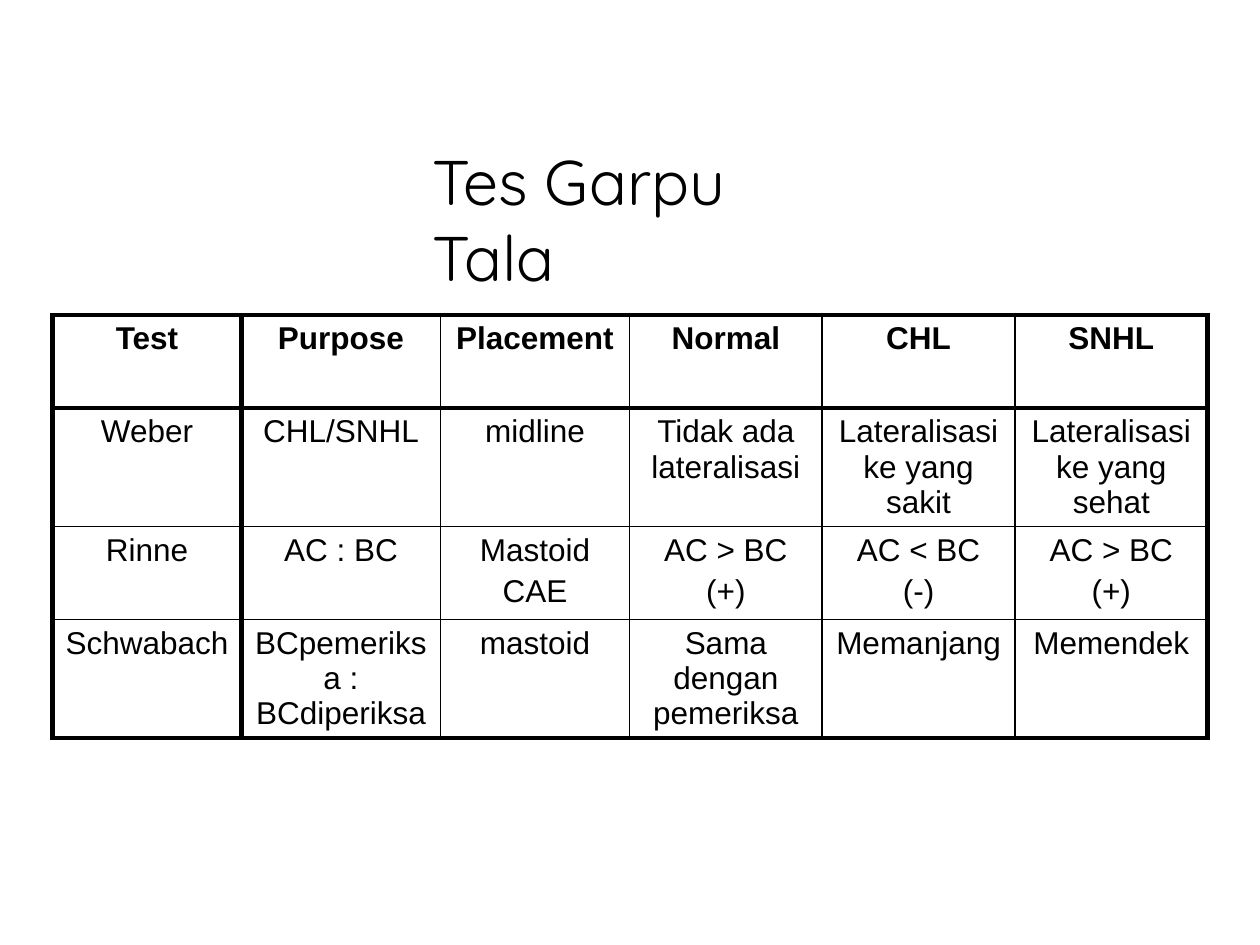
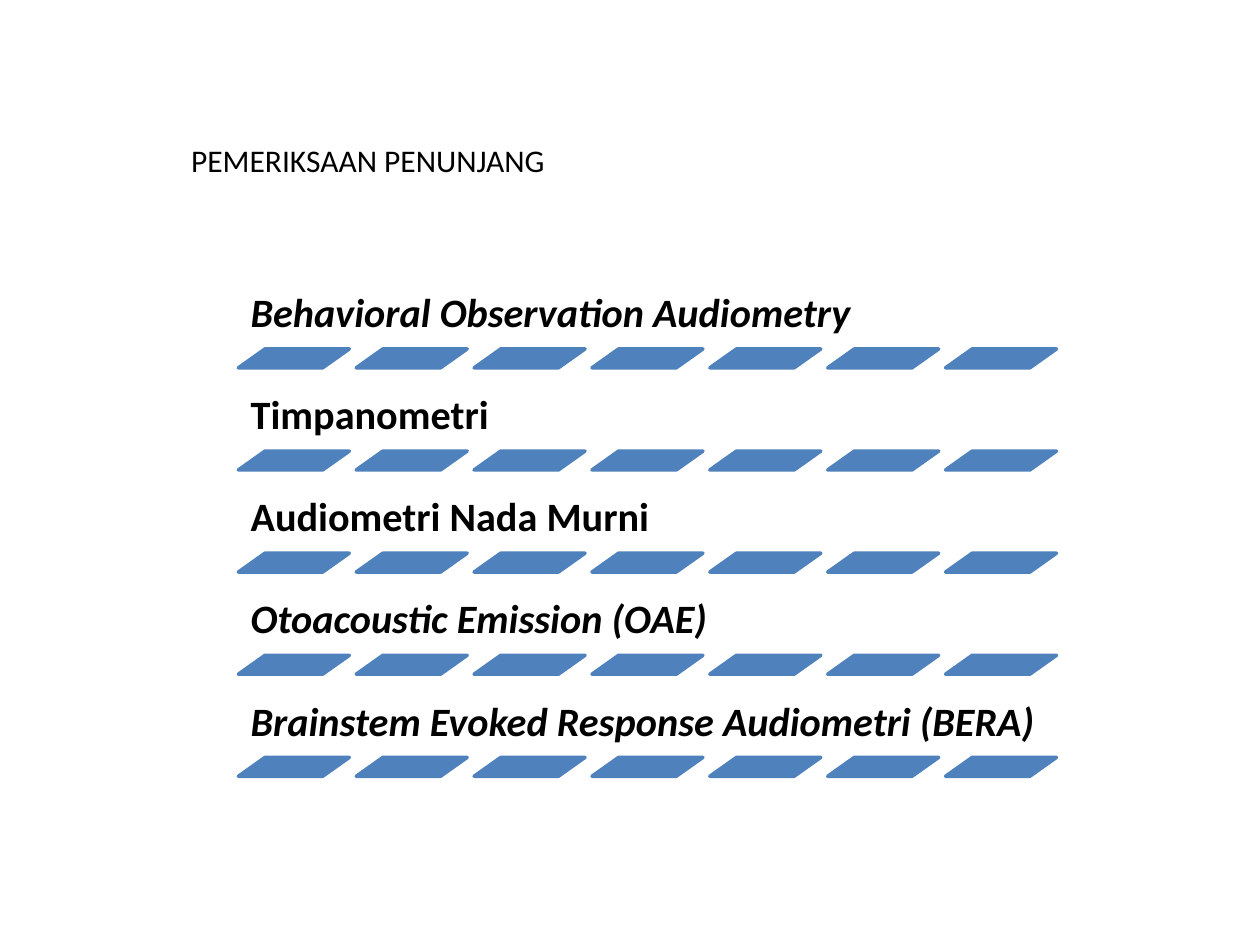
import pptx
import pptx.dml.color
import pptx.enum.shapes
import pptx.enum.text
import pptx.oxml
import pptx.oxml.ns
import pptx.util

Pt = pptx.util.Pt
ALIGN = pptx.enum.text.PP_ALIGN
ANCHOR = pptx.enum.text.MSO_ANCHOR

COLOURS = {"ink": "000000", "paper": "FFFFFF", "stripe": "4F81BD"}
TITLE_ONLY = 5

TESTS = [
    ["Test", "Purpose", "Placement", "Normal", "CHL", "SNHL"],
    ["Weber", "CHL/SNHL", "midline", "Tidak ada lateralisasi",
     "Lateralisasi ke yang sakit", "Lateralisasi ke yang sehat"],
    ["Rinne", "AC : BC", "Mastoid\nCAE", "AC > BC\n(+)", "AC < BC\n(-)", "AC > BC\n(+)"],
    ["Schwabach", "BCpemeriksa : BCdiperiksa", "mastoid", "Sama dengan pemeriksa",
     "Memanjang", "Memendek"],
]
COLUMN_WIDTHS = [108, 113.75, 108, 110.15, 110.15, 110.15]
ROW_HEIGHT = 53.2
THICK, THIN = 3, 1

# Wording and whether it is italic
EXAMINATIONS = [
    ("Behavioral Observation Audiometry", True),
    ("Timpanometri", False),
    ("Audiometri Nada Murni", False),
    ("Otoacoustic Emission (OAE)", True),
    ("Brainstem Evoked Response Audiometri (BERA)", True),
]
LIST_LEFT, LIST_TOP, LIST_PITCH = 136.2, 156.2, 58.35
LABEL_WIDTH, LABEL_HEIGHT = 477.4, 43.2
STRIPE_COUNT, STRIPE_PITCH = 7, 67.35
STRIPE_WIDTH, STRIPE_HEIGHT, STRIPE_SLANT = 63.4, 10.8, 1.41


def rgb(name):
    return pptx.dml.color.RGBColor.from_string(COLOURS[name])


def set_all(target, values):
    for name, value in values.items():
        setattr(target, name, value)


def format_font(font, name, size, bold=False, italic=False):
    set_all(font, {"name": name, "size": Pt(size), "bold": bold, "italic": italic})
    font.color.rgb = rgb("ink")


def add_page(deck):
    page = deck.slides.add_slide(deck.slide_layouts[TITLE_ONLY])
    page.background.fill.solid()
    page.background.fill.fore_color.rgb = rgb("paper")
    return page


def set_title(page, text, place, font_name, size):
    title = page.shapes.title
    set_all(title, dict(zip(("left", "top", "width", "height"), map(Pt, place))))
    frame = title.text_frame
    frame.text = text
    set_all(frame, {"word_wrap": True, "vertical_anchor": ANCHOR.TOP,
                    "auto_size": pptx.enum.text.MSO_AUTO_SIZE.NONE})
    para = frame.paragraphs[0]
    para.alignment = ALIGN.LEFT
    format_font(para.runs[0].font, font_name, size)


def set_borders(cell, weights):
    """Draw the cell's edges; weights maps L, R, T and B to points."""
    properties = cell._tc.get_or_add_tcPr()
    for side, weight in weights.items():
        properties.append(pptx.oxml.parse_xml(
            f'<a:ln{side} {pptx.oxml.ns.nsdecls("a")} w="{Pt(weight)}"><a:solidFill>'
            f'<a:srgbClr val="{COLOURS["ink"]}"/></a:solidFill></a:ln{side}>'))


def fill_cell(cell, text, bold):
    cell.fill.background()
    cell.text_frame.text = text
    for index, para in enumerate(cell.text_frame.paragraphs):
        para.alignment = ALIGN.CENTER
        if index:
            para.space_before = Pt(3.6)
        format_font(para.runs[0].font, "Arial", 18, bold)


def add_test_table(page, left, top):
    """Thick lines frame the table, its header row and its first column."""
    last_row, last_column = len(TESTS) - 1, len(COLUMN_WIDTHS) - 1
    table = page.shapes.add_table(
        len(TESTS), len(COLUMN_WIDTHS), Pt(left), Pt(top),
        Pt(sum(COLUMN_WIDTHS)), Pt(ROW_HEIGHT * len(TESTS))).table
    set_all(table, {"first_row": False, "horz_banding": False})
    for column, width in zip(table.columns, COLUMN_WIDTHS):
        column.width = Pt(width)
    for row_index, texts in enumerate(TESTS):
        table.rows[row_index].height = Pt(ROW_HEIGHT)
        for column_index, text in enumerate(texts):
            cell = table.cell(row_index, column_index)
            thick = {"L": column_index <= 1, "R": column_index in (0, last_column),
                     "T": row_index <= 1, "B": row_index in (0, last_row)}
            set_borders(cell, {side: THICK if is_thick else THIN
                               for side, is_thick in thick.items()})
            fill_cell(cell, text, bold=row_index == 0)


def add_label(page, text, italic, top):
    box = page.shapes.add_textbox(Pt(LIST_LEFT), Pt(top), Pt(LABEL_WIDTH), Pt(LABEL_HEIGHT))
    frame = box.text_frame
    set_all(frame, {"word_wrap": True, "vertical_anchor": ANCHOR.BOTTOM})
    set_all(frame, {f"margin_{side}": Pt(7.2) for side in ("left", "top", "right", "bottom")})
    frame.text = text
    para = frame.paragraphs[0]
    set_all(para, {"line_spacing": 0.9, "space_after": Pt(8), "alignment": ALIGN.LEFT})
    format_font(para.runs[0].font, "Calibri", 23, True, italic)


def add_stripes(page, top):
    for index in range(STRIPE_COUNT):
        stripe = page.shapes.add_shape(
            pptx.enum.shapes.MSO_SHAPE.PARALLELOGRAM,
            Pt(LIST_LEFT + index * STRIPE_PITCH), Pt(top), Pt(STRIPE_WIDTH), Pt(STRIPE_HEIGHT))
        stripe.adjustments[0] = STRIPE_SLANT
        stripe.shadow.inherit = False
        stripe.fill.solid()
        stripe.fill.fore_color.rgb = rgb("stripe")
        stripe.line.color.rgb = rgb("stripe")
        stripe.line.width = Pt(2)


def main():
    deck = pptx.Presentation()
    set_all(deck, {"slide_width": Pt(720), "slide_height": Pt(540)})

    page = add_page(deck)
    set_title(page, "Tes Garpu Tala", (240, 78, 252, 90), "Quicksand", 36)
    add_test_table(page, 30, 180)

    page = add_page(deck)
    set_title(page, "PEMERIKSAAN PENUNJANG", (102, 77, 756, 103), "Calibri", 18)
    for index, (text, italic) in enumerate(EXAMINATIONS):
        top = LIST_TOP + index * LIST_PITCH
        add_label(page, text, italic, top)
        add_stripes(page, top + LABEL_HEIGHT)

    deck.save("out.pptx")


if __name__ == "__main__":
    main()
